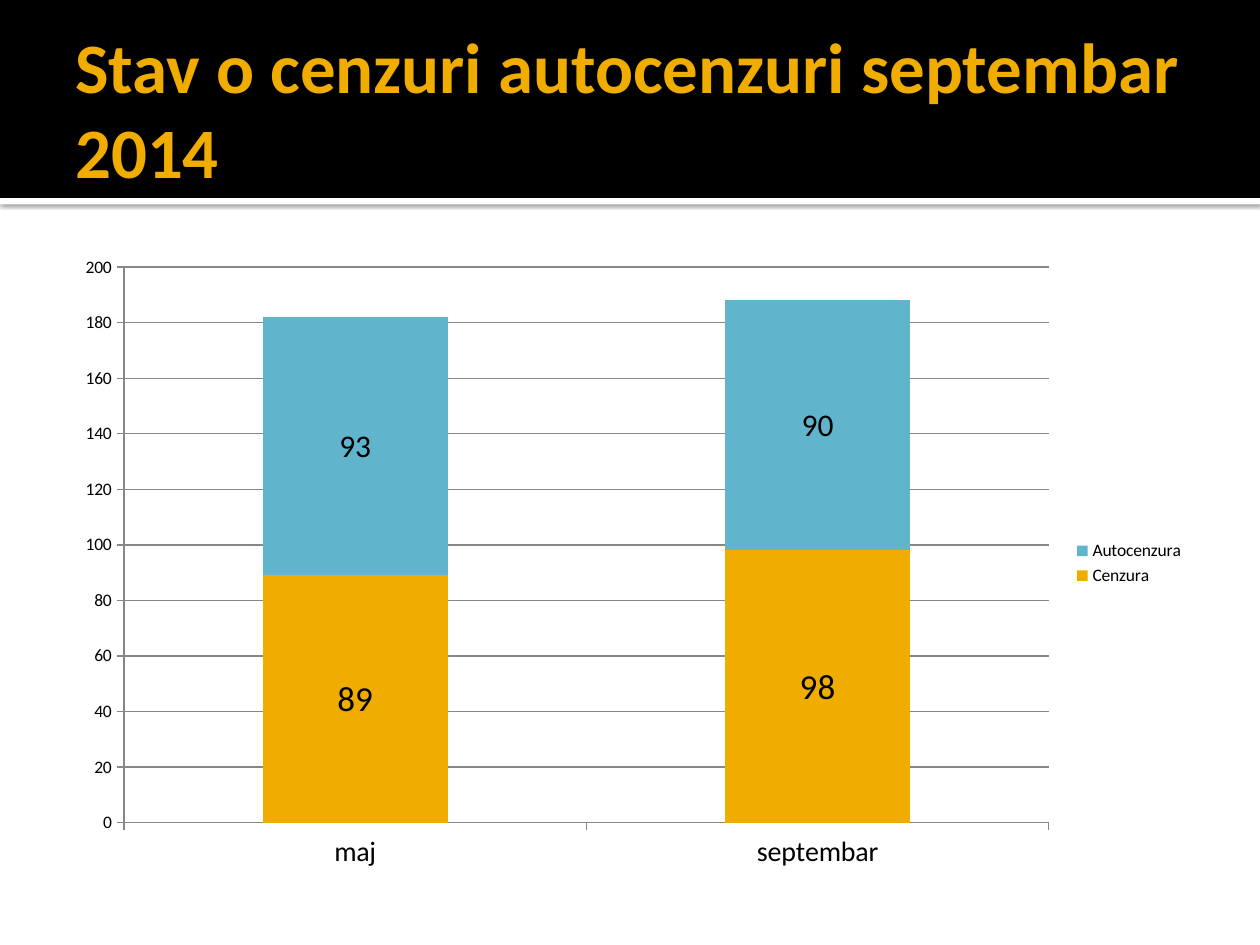
from lxml import etree
from pptx import Presentation
from pptx.chart.data import CategoryChartData
from pptx.dml.color import RGBColor
from pptx.enum.chart import XL_CHART_TYPE as ChartType, XL_LABEL_POSITION as LabelPos
from pptx.enum.chart import XL_LEGEND_POSITION as LegendPos, XL_TICK_MARK as Tick
from pptx.enum.shapes import MSO_SHAPE as Shape
from pptx.enum.text import MSO_ANCHOR as Anchor
from pptx.oxml.ns import qn
from pptx.util import Cm, Pt

FONT = "Calibri"
BLACK, WHITE, GREY = "000000", "FFFFFF", "878787"
AMBER, BLUE = "F0AD00", "60B5CC"
CATEGORIES = ["maj", "septembar"]
# name, values, colour, label size
SERIES = [("Cenzura", (89, 98), AMBER, 20), ("Autocenzura", (93, 90), BLUE, 18)]


def rgb(value):
    return RGBColor.from_string(value)


def set_font(font, size, color=BLACK, bold=False):
    for name, value in dict(name=FONT, size=Pt(size), bold=bold).items():
        setattr(font, name, value)
    font.color.rgb = rgb(color)


def add_bar(slide, x, y, w, h, color):
    sp = slide.shapes.add_shape(Shape.RECTANGLE, Cm(x), Cm(y), Cm(w), Cm(h))
    sp.shadow.inherit = False
    sp.fill.solid()
    sp.fill.fore_color.rgb = rgb(color)
    sp.line.fill.background()
    return sp


def add_drop_shadow(sp, blur, distance, opacity):
    """Cast a black shadow straight down; opacity is in percent."""
    effects = sp._element.spPr.find(qn("a:effectLst"))
    shadow = etree.SubElement(effects, qn("a:outerShdw"), blurRad=str(Pt(blur)),
                              dist=str(Pt(distance)), dir="5400000",
                              algn="tl", rotWithShape="0")
    color = etree.SubElement(shadow, qn("a:srgbClr"), val=BLACK)
    etree.SubElement(color, qn("a:alpha"), val=str(opacity * 1000))


def add_header(slide, x, y, w, h, title):
    strip = add_bar(slide, x, y + h, w, 0.13, WHITE)
    add_drop_shadow(strip, blur=2.5, distance=0.8, opacity=60)
    add_bar(slide, x, y, w, h, BLACK)
    box = slide.shapes.add_textbox(Cm(x + 1.27), Cm(y + 0.43), Cm(w - 2.54), Cm(3.48))
    tf = box.text_frame
    settings = dict(word_wrap=True, vertical_anchor=Anchor.MIDDLE, margin_left=Cm(0.25),
                    margin_right=Cm(0.13), margin_top=Cm(0.13), margin_bottom=Cm(0.13))
    for name, value in settings.items():
        setattr(tf, name, value)
    r = tf.paragraphs[0].add_run()
    r.text = title
    set_font(r.font, 40.5, AMBER, bold=True)


def format_axis(axis, size):
    axis.major_tick_mark = Tick.OUTSIDE
    axis.minor_tick_mark = Tick.NONE
    axis.format.line.color.rgb = rgb(GREY)
    set_font(axis.tick_labels.font, size)


def add_stacked_chart(slide, x, y, w, h):
    data = CategoryChartData()
    data.categories = CATEGORIES
    for name, values, _, _ in SERIES:
        data.add_series(name, values)
    chart = slide.shapes.add_chart(ChartType.COLUMN_STACKED, Cm(x), Cm(y),
                                   Cm(w), Cm(h), data).chart
    set_font(chart.font, 10)
    chart.has_title = False
    chart.has_legend = True
    chart.legend.position = LegendPos.RIGHT
    chart.legend.include_in_layout = False

    format_axis(chart.category_axis, 16)
    axis = chart.value_axis
    format_axis(axis, 10)
    axis.minimum_scale, axis.maximum_scale, axis.major_unit = 0, 200, 20
    axis.has_major_gridlines = True
    axis.major_gridlines.format.line.color.rgb = rgb(GREY)

    plot = chart.plots[0]
    plot.gap_width, plot.overlap, plot.vary_by_categories = 150, 100, False
    for series, (_, _, color, label_size) in zip(plot.series, SERIES):
        series.format.fill.solid()
        series.format.fill.fore_color.rgb = rgb(color)
        labels = series.data_labels
        labels.show_value = True
        labels.position = LabelPos.CENTER
        set_font(labels.font, label_size)


def main():
    prs = Presentation()
    prs.slide_width, prs.slide_height = Cm(25.4), Cm(19.05)
    slide = prs.slides.add_slide(prs.slide_layouts[6])
    add_header(slide, 0, 0, 25.4, 3.99, "Stav o cenzuri autocenzuri septembar 2014")
    add_stacked_chart(slide, 1.27, 4.93, 22.86, 12.85)
    prs.save("out.pptx")


if __name__ == "__main__":
    main()
